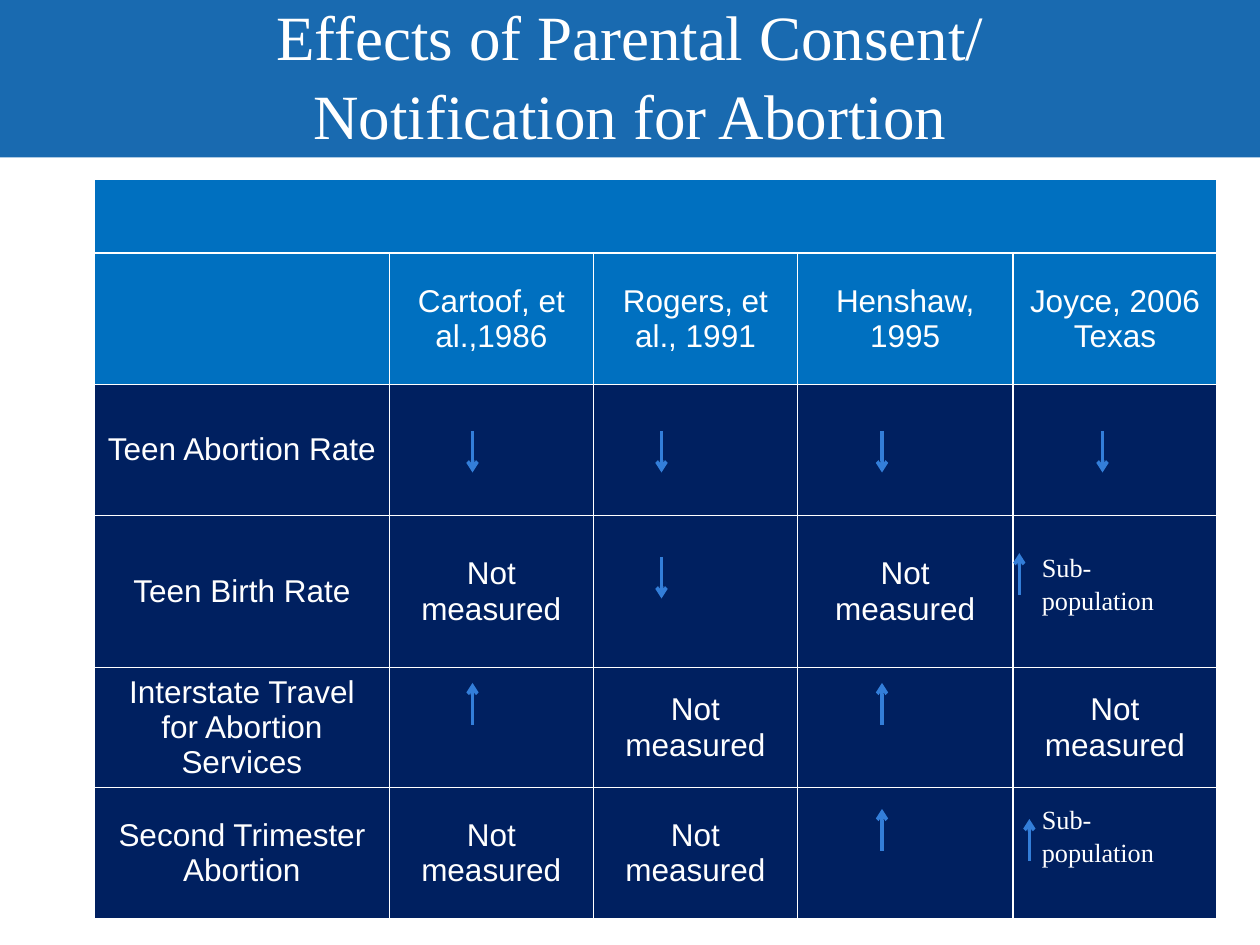
from lxml.etree import SubElement
from pptx import Presentation
from pptx.dml.color import RGBColor
from pptx.enum.shapes import MSO_CONNECTOR, MSO_SHAPE
from pptx.enum.text import MSO_ANCHOR, PP_ALIGN
from pptx.oxml import parse_xml
from pptx.oxml.ns import nsdecls, qn
from pptx.util import Inches, Pt

COLORS = {"band": "196AB0", "header": "0070C0", "body": "002060",
          "arrow": "337ED9", "white": "FFFFFF"}
SERIF, SANS = "Times New Roman", "Arial"
WIDTH, HEIGHT = 10, 7.5

COLUMNS = [2.34, 1.62, 1.62, 1.71, 1.62]
ROWS = [0.59, 1.04, 1.04, 1.21, 0.95, 1.04]
HEADER_ROWS = 2
NO_DATA = "Not measured"
CELLS = [
    ["", "", "", "", ""],
    ["", "Cartoof, et al.,1986", "Rogers, et al., 1991", "Henshaw,\n1995", "Joyce, 2006 Texas"],
    ["Teen Abortion Rate", "", "", "", ""],
    ["Teen Birth Rate", NO_DATA, "", NO_DATA, ""],
    ["Interstate Travel for Abortion Services", "", NO_DATA, "", NO_DATA],
    ["Second Trimester Abortion", NO_DATA, NO_DATA, "", ""],
]

# Arrow grid: study positions across, one inch between outcomes
STUDY_X = [3.0, 4.5, 6.25, 8.0]
OUTCOME_Y = [2.0, 3.0, 4.0, 5.0]
ARROW_LENGTH = 0.33
# (study, outcome, direction)
ARROWS = [(0, 0, "down"), (1, 0, "down"), (2, 0, "down"), (3, 0, "down"),
          (1, 1, "down"), (0, 2, "up"), (2, 2, "up"), (2, 3, "up")]
# Sub-population findings: (outcome, arrow x, arrow y)
SUBGROUPS = [(1, 7.34, 2.97), (3, 7.42, 5.08)]


def color(name):
    return RGBColor.from_string(COLORS[name])


def format_text(frame, font, size, align, spacing=None):
    for para in frame.paragraphs:
        para.alignment = align
        if spacing:
            para.line_spacing = spacing
        para.font.size = Pt(size)
        for span in para.runs:
            span.font.name = font
            span.font.size = Pt(size)
            span.font.color.rgb = color("white")


def add_title(page, left, top, width, height):
    band = page.shapes.add_shape(MSO_SHAPE.RECTANGLE, Inches(left), Inches(top),
                                 Inches(width), Inches(height))
    band.shadow.inherit = False
    band.fill.solid()
    band.fill.fore_color.rgb = color("band")
    band.line.fill.background()

    title = page.shapes.title
    title.element.addprevious(band.element)  # band behind the title
    title.left, title.top = Inches(left + width * 0.05), Inches(top + 0.08)
    title.width, title.height = Inches(width * 0.9), Inches(height * 0.8)
    frame = title.text_frame
    frame.text = "Effects of Parental Consent/\vNotification for Abortion"
    frame.vertical_anchor = MSO_ANCHOR.MIDDLE
    format_text(frame, SERIF, 36, PP_ALIGN.CENTER, 1.05)


def add_borders(cell):
    properties = cell._tc.get_or_add_tcPr()
    for index, side in enumerate("LRTB"):
        properties.insert(index, parse_xml(
            f'<a:ln{side} {nsdecls("a")} w="12700"><a:solidFill>'
            f'<a:srgbClr val="{COLORS["white"]}"/></a:solidFill></a:ln{side}>'))


def add_results_table(page, left, top):
    table = page.shapes.add_table(len(ROWS), len(COLUMNS), Inches(left), Inches(top),
                                  Inches(sum(COLUMNS)), Inches(sum(ROWS))).table
    table.first_row = table.horz_banding = False
    for column, width in zip(table.columns, COLUMNS):
        column.width = Inches(width)
    for row, height in zip(table.rows, ROWS):
        row.height = Inches(height)
    for r, texts in enumerate(CELLS):
        for c, text in enumerate(texts):
            cell = table.cell(r, c)
            cell.text_frame.text = text
            cell.vertical_anchor = MSO_ANCHOR.MIDDLE
            format_text(cell.text_frame, SANS, 18, PP_ALIGN.CENTER)
            cell.fill.solid()
            cell.fill.fore_color.rgb = color("header" if r < HEADER_ROWS else "body")
            add_borders(cell)
    table.cell(0, 0).merge(table.cell(0, len(COLUMNS) - 1))


def add_arrow(page, x, y, direction):
    ends = [y, y + ARROW_LENGTH]
    if direction == "up":
        ends.reverse()
    arrow = page.shapes.add_connector(MSO_CONNECTOR.STRAIGHT, Inches(x), Inches(ends[0]),
                                      Inches(x), Inches(ends[1]))
    arrow.line.color.rgb = color("arrow")
    arrow.line.width = Pt(2)
    SubElement(arrow.line._get_or_add_ln(), qn("a:tailEnd"), type="arrow")
    SubElement(arrow.element.spPr, qn("a:effectLst"))


def add_findings(page, left, top):
    for study, outcome, direction in ARROWS:
        add_arrow(page, left + STUDY_X[study], top + OUTCOME_Y[outcome], direction)
    for outcome, x, y in SUBGROUPS:
        add_arrow(page, left + x, top + y, "up")
        label = page.shapes.add_textbox(Inches(left + 7.42),
                                        Inches(top + OUTCOME_Y[outcome] - 0.11),
                                        Inches(1.25), Inches(0.61))
        label.text_frame.word_wrap = True
        label.text_frame.text = "Sub- population"
        format_text(label.text_frame, SERIF, 15, PP_ALIGN.LEFT, 1.05)


def main():
    deck = Presentation()
    deck.slide_width, deck.slide_height = Inches(WIDTH), Inches(HEIGHT)
    page = deck.slides.add_slide(deck.slide_layouts[5])
    add_title(page, 0, 0, WIDTH, HEIGHT / 6)
    add_results_table(page, 0.75, 1.42)
    add_findings(page, 0.75, 1.42)
    deck.save("out.pptx")


if __name__ == "__main__":
    main()
